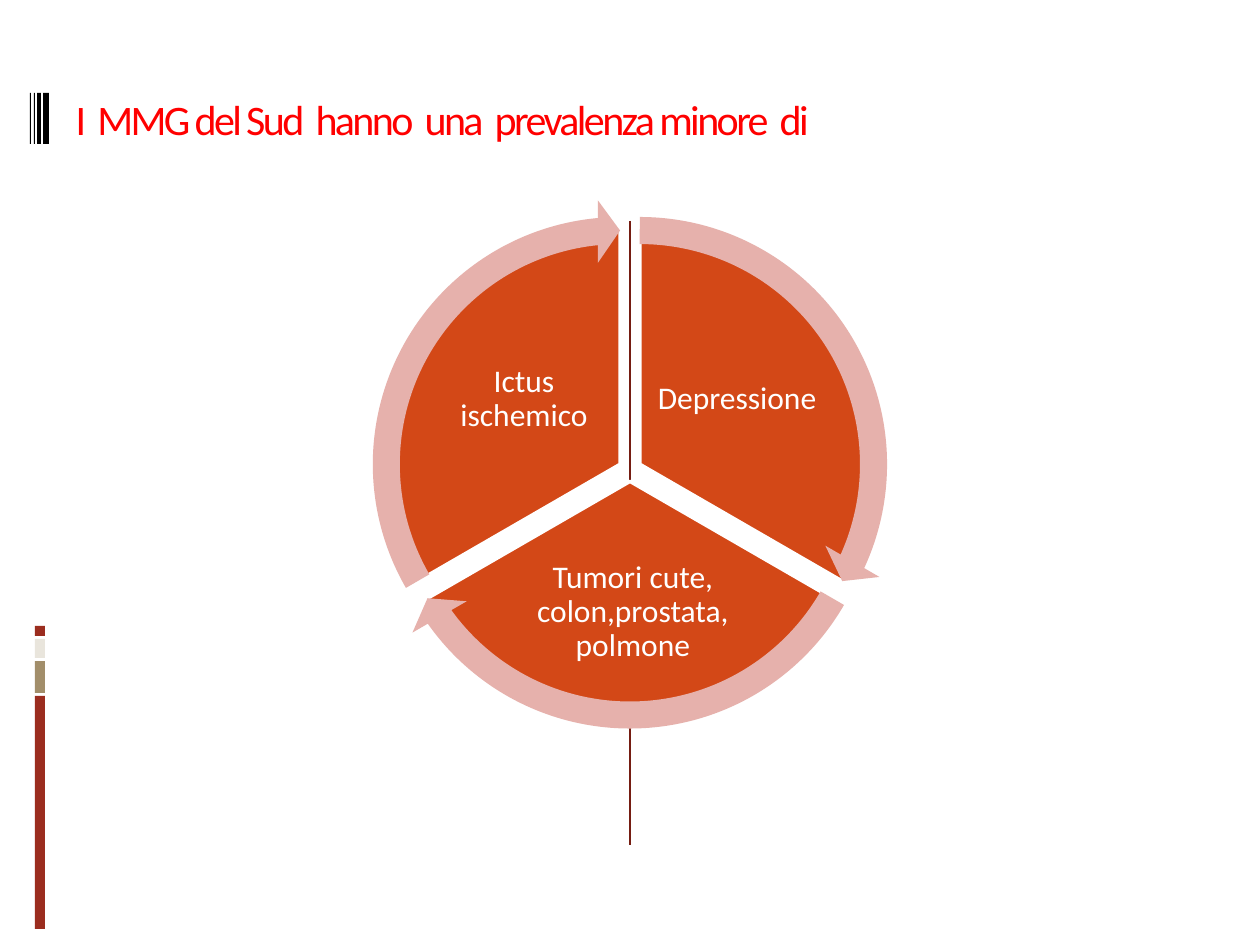
from math import cos, radians, sin

from lxml.etree import SubElement
from pptx import Presentation
from pptx.dml.color import RGBColor
from pptx.enum.shapes import MSO_CONNECTOR as LINE, MSO_SHAPE as SHAPE
from pptx.enum.text import MSO_ANCHOR as ANCHOR, MSO_AUTO_SIZE as FIT, PP_ALIGN as ALIGN
from pptx.oxml.ns import qn
from pptx.util import Emu, Pt

RED = RGBColor(0xFF, 0x00, 0x00)
BRICK = RGBColor(0x9B, 0x2D, 0x1F)
SAND = RGBColor(0xA2, 0x8E, 0x6A)
CREAM = RGBColor(0xE9, 0xE5, 0xDC)
MAROON = RGBColor(0x75, 0x1D, 0x12)
ORANGE = RGBColor(0xD3, 0x48, 0x17)
PINK = RGBColor(0xE6, 0xB1, 0xAC)
BLACK = RGBColor(0x00, 0x00, 0x00)
WHITE = RGBColor(0xFF, 0xFF, 0xFF)

FONT = "Calibri"
SCALE = 914400 / 126


def px(n):
    return Emu(round(n * SCALE))


def area(box):
    return [px(n) for n in box]


def write(shape, text, size=18, color=WHITE, align=ALIGN.CENTER,
          inset=None, lead=None, track=None):
    frame = shape.text_frame
    frame.word_wrap = True
    frame.auto_size = FIT.NONE
    frame.vertical_anchor = ANCHOR.MIDDLE
    if inset is not None:
        frame.margin_left = frame.margin_right = px(inset)
        frame.margin_top = frame.margin_bottom = px(inset)
    para = frame.paragraphs[0]
    para.alignment = align
    if lead:
        para.line_spacing = lead
    run = para.add_run()
    run.text = text
    run.font.name, run.font.size = FONT, Pt(size)
    run.font.color.rgb = color
    if track:
        run.font._element.set("spc", str(round(track * 100)))


def draw(slide, kind, box, fill, edge=None, adjust=()):
    shape = slide.shapes.add_shape(kind, *area(box))
    shape.shadow.inherit = False
    shape.fill.solid()
    shape.fill.fore_color.rgb = fill
    if edge:
        shape.line.color.rgb, shape.line.width = edge, Pt(2)
    else:
        shape.line.fill.background()
    for i, value in enumerate(adjust):
        shape.adjustments[i] = value
    return shape


def add_side(slide, box):
    # Stacked color bars at the left edge
    left, top, width, _ = box
    for drop, height, fill in ((70, 233, BRICK), (35, 32, SAND),
                               (13, 19, CREAM), (0, 10, BRICK)):
        draw(slide, SHAPE.RECTANGLE, (left, top + drop, width, height), fill)


def add_mark(slide, box):
    # Black stripes beside the title
    left, top, _, height = box
    for shift, width in ((13, 6), (7, 4), (4, 1), (0, 1)):
        draw(slide, SHAPE.RECTANGLE, (left + shift, top, width, height), BLACK)


def add_axis(slide, box):
    # Thin vertical line behind the wheel
    left, top, _, height = box
    line = slide.shapes.add_connector(
        LINE.STRAIGHT, px(left), px(top), px(left), px(top + height))
    line.line.color.rgb, line.line.width = MAROON, Pt(0.75)
    SubElement(line._element.spPr, qn("a:effectLst"))


def add_title(slide, box, text):
    title = slide.shapes.title
    title.left, title.top, title.width, title.height = area(box)
    write(title, text, size=24, color=RED, align=ALIGN.LEFT, track=-1.5)


def add_wheel(slide, box):
    # Three slices pushed out from the hub, each with an arrow around it
    left, top, size, _ = box
    hub_x, hub_y = left + size / 2, top + size / 2
    push, pie = 11.4, 470
    # Label, its box inside the wheel, arrow end and start
    parts = (
        ("Depressione", (288, 124, 168, 140), 14.725, 161.994),
        ("Tumori cute, colon,prostata, polmone", (142, 346, 252, 123), 86.72, 18.005),
        ("Ictus ischemico", (75, 124, 168, 140), 158.73, 90),
    )
    rings = []
    for i, (text, (dx, dy, wide, high), end, start) in enumerate(parts):
        mid = radians(120 * i - 30)
        x, y = hub_x + push * cos(mid), hub_y + push * sin(mid)
        first = 18 + 72 * ((i - 1) % 3)
        last = 18 + 72 * i
        draw(slide, SHAPE.PIE, (x - pie / 2, y - pie / 2, pie, pie),
             ORANGE, edge=WHITE, adjust=(first, last))
        label = slide.shapes.add_textbox(*area((left + dx, top + dy, wide, high)))
        write(label, text, inset=4, lead=0.9)
        rings.append(((x - size / 2, y - size / 2, size, size),
                      (0.051, 3.275, end, start, 0.059)))
    for ring, adjust in rings:
        draw(slide, SHAPE.CIRCULAR_ARROW, ring, PINK, adjust=adjust)


def main():
    deck = Presentation()
    deck.slide_width, deck.slide_height = px(1260), px(945)
    slide = deck.slides.add_slide(deck.slide_layouts[5])
    add_side(slide, (35, 626, 10, 303))
    add_mark(slide, (30, 93, 19, 51))
    add_axis(slide, (630, 221, 0, 624))
    add_title(slide, (63, 29, 1134, 179),
              "I  MMG del Sud  hanno  una  prevalenza minore  di")
    add_wheel(slide, (365, 205, 530, 530))
    deck.save("out.pptx")


if __name__ == "__main__":
    main()
